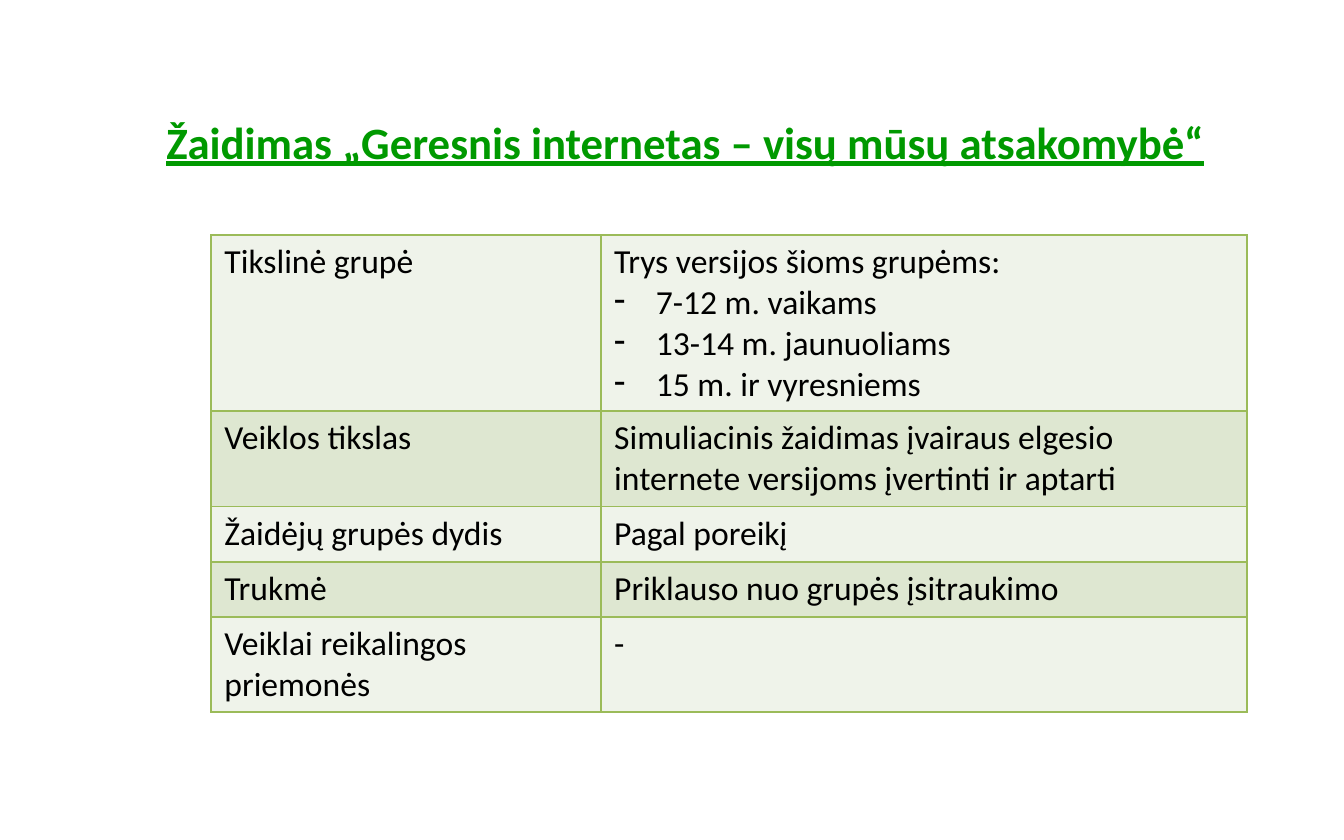
from dataclasses import dataclass

import pptx
import pptx.dml.color
import pptx.enum.text
import pptx.oxml
import pptx.oxml.ns
import pptx.util

PX = 9144


@dataclass(frozen=True)
class Theme:
    """Colours, font and type sizes of the slide."""
    font: str = "Calibri"
    title_size: int = 24
    body_size: int = 18
    heading: str = "009900"
    ink: str = "000000"
    border: str = "9BBB59"
    bands: tuple = ("EFF3EA", "DEE7D1")


THEME = Theme()
TITLE = "Žaidimas „Geresnis internetas – visų mūsų atsakomybė“"
DETAILS = [
    ("Tikslinė grupė", "Trys versijos šioms grupėms:",
     ["7-12 m. vaikams", "13-14 m. jaunuoliams", "15 m. ir vyresniems"], 4),
    ("Veiklos tikslas",
     "Simuliacinis žaidimas įvairaus elgesio internete versijoms įvertinti ir aptarti", [], 2),
    ("Žaidėjų grupės dydis", "Pagal poreikį", [], 1),
    ("Trukmė", "Priklauso nuo grupės įsitraukimo", [], 1),
    ("Veiklai reikalingos priemonės", "-", [], 2),
]


def colour(value):
    """Return a colour from its hex code."""
    return pptx.dml.color.RGBColor.from_string(value)


def style_runs(paragraph, size, ink):
    """Format every run of a paragraph."""
    for run in paragraph.runs:
        run.font.name = THEME.font
        run.font.size = pptx.util.Pt(size)
        run.font.color.rgb = colour(ink)


def add_dash(paragraph):
    """Give a paragraph a dash bullet with a hanging indent."""
    properties = paragraph._p.get_or_add_pPr()
    properties.set("marL", str(31 * PX))
    properties.set("indent", str(-31 * PX))
    properties.append(pptx.oxml.parse_xml(
        f'<a:buChar {pptx.oxml.ns.nsdecls("a")} char="-"/>'))


def add_borders(cell):
    """Draw all four borders of a cell."""
    properties = cell._tc.get_or_add_tcPr()
    for position, side in enumerate(("lnL", "lnR", "lnT", "lnB")):
        properties.insert(position, pptx.oxml.parse_xml(
            f'<a:{side} {pptx.oxml.ns.nsdecls("a")} w="12700"><a:solidFill>'
            f'<a:srgbClr val="{THEME.border}"/></a:solidFill></a:{side}>'))


def fill_cell(cell, lead, groups, band):
    """Write a lead line and its dashed groups into a banded cell."""
    cell.fill.solid()
    cell.fill.fore_color.rgb = colour(band)
    add_borders(cell)
    cell.text_frame.text = lead
    for group in groups:
        entry = cell.text_frame.add_paragraph()
        entry.text = group
        add_dash(entry)
    for paragraph in cell.text_frame.paragraphs:
        style_runs(paragraph, THEME.body_size, THEME.ink)


def add_title(slide, left, top, width, height):
    """Place the underlined game title in its box."""
    title = slide.shapes.add_textbox(left * PX, top * PX, width * PX, height * PX)
    title.text_frame.word_wrap = True
    title.text_frame.vertical_anchor = pptx.enum.text.MSO_ANCHOR.MIDDLE
    title.text_frame.text = TITLE
    heading = title.text_frame.paragraphs[0]
    style_runs(heading, THEME.title_size, THEME.heading)
    heading.runs[0].font.bold = True
    heading.runs[0].font.underline = True


def add_details(slide, left, top, width, label_width):
    """Place the table of game details, its rows as high as their lines need."""
    heights = [41 + 30 * (lines - 1) for *_, lines in DETAILS]
    details = slide.shapes.add_table(
        len(DETAILS), 2, left * PX, top * PX, width * PX, sum(heights) * PX).table
    details.first_row = False
    details.columns[0].width = label_width * PX
    details.columns[1].width = (width - label_width) * PX
    for index, (label, lead, groups, _) in enumerate(DETAILS):
        details.rows[index].height = heights[index] * PX
        band = THEME.bands[index % 2]
        fill_cell(details.cell(index, 0), label, [], band)
        fill_cell(details.cell(index, 1), lead, groups, band)


def main():
    """Build and save the slide."""
    deck = pptx.Presentation()
    deck.slide_width = 1000 * PX
    deck.slide_height = 625 * PX
    slide = deck.slides.add_slide(deck.slide_layouts[6])
    add_title(slide, 114, 53, 829, 104)
    add_details(slide, 157, 175, 771, 290)
    deck.save("out.pptx")


if __name__ == "__main__":
    main()
